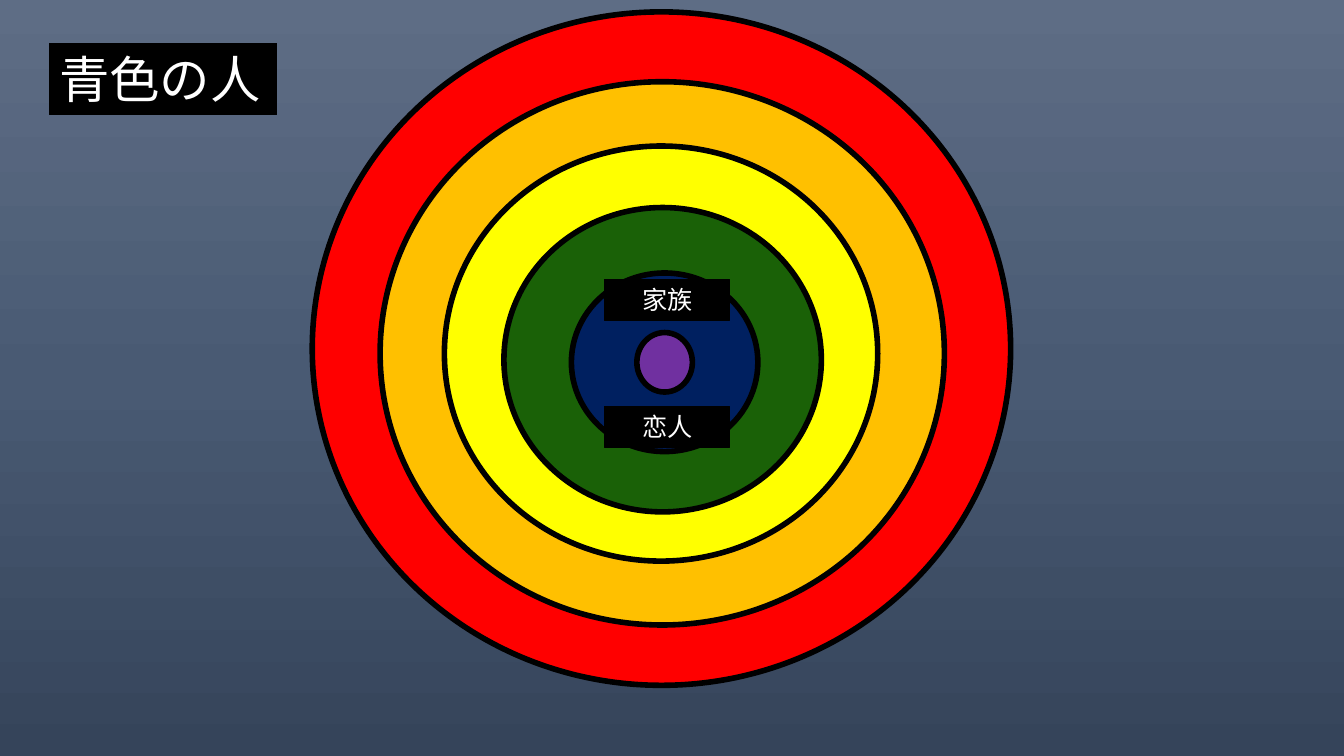
from copy import deepcopy

from lxml.etree import SubElement
from pptx import Presentation
from pptx.dml.color import RGBColor
from pptx.enum.shapes import MSO_SHAPE
from pptx.enum.text import MSO_ANCHOR, MSO_AUTO_SIZE, PP_ALIGN
from pptx.oxml.ns import qn
from pptx.util import Cm, Pt

# Content: lengths in cm, given as left, top, width, height
FONT = "Noto Sans CJK JP"
BLACK, WHITE = "000000", "FFFFFF"
BACKDROP = [(0, "5E6D85"), (0.5, "495A73"), (1, "35445A")]
RINGS = [
    ("FF0000", (7.87, 0.3, 17.6, 16.97)),
    ("FFC000", (9.58, 2.06, 14.22, 13.69)),
    ("FFFF00", (11.2, 3.68, 10.92, 10.46)),
    ("1A6107", (12.7, 5.23, 8.0, 7.67)),
    ("002060", (14.4, 6.88, 4.7, 4.5)),
    ("7030A0", (16.05, 8.38, 1.4, 1.5)),
]
LABELS = [
    ("家族", 18, PP_ALIGN.CENTER, (15.24, 7.04, 3.15, 1.03)),
    ("恋人", 18, PP_ALIGN.CENTER, (15.24, 10.24, 3.15, 1.03)),
    ("青色の人", 36, PP_ALIGN.LEFT, (1.24, 1.09, 5.74, 1.8)),
]


def color(hex_code):
    return RGBColor.from_string(hex_code)


def add_block(slide, kind, box, fill, line_width):
    block = slide.shapes.add_shape(kind, *(Cm(length) for length in box))
    block.shadow.inherit = False
    block.fill.solid()
    block.fill.fore_color.rgb = color(fill)
    block.line.color.rgb = color(BLACK)
    block.line.width = Pt(line_width)
    return block


def add_label(slide, wording, size, align, box):
    label = add_block(slide, MSO_SHAPE.RECTANGLE, box, BLACK, 0.75)
    frame = label.text_frame
    frame.text = wording
    frame.word_wrap = True
    frame.auto_size = MSO_AUTO_SIZE.SHAPE_TO_FIT_TEXT
    frame.vertical_anchor = MSO_ANCHOR.TOP
    paragraph = frame.paragraphs[0]
    paragraph.alignment = align
    paragraph.font.size = Pt(size)
    paragraph.font.color.rgb = color(WHITE)
    paragraph.font.name = FONT
    # Japanese glyphs take the East Asian typeface
    defaults = label.element.find(".//" + qn("a:defRPr"))
    SubElement(defaults, qn("a:ea"), typeface=FONT)


def paint_backdrop(slide):
    fill = slide.background.fill
    fill.gradient()
    fill.gradient_angle = 270
    stops = slide.element.find(".//" + qn("a:gsLst"))
    while len(stops) < len(BACKDROP):
        stops.append(deepcopy(stops[-1]))
    for stop, (position, shade) in zip(fill.gradient_stops, BACKDROP):
        stop.position = position
        stop.color.rgb = color(shade)


def main():
    deck = Presentation()
    deck.slide_width, deck.slide_height = Cm(33.87), Cm(19.05)
    slide = deck.slides.add_slide(deck.slide_layouts[6])
    paint_backdrop(slide)

    # Rings from the outside in, then the labels on top
    for fill, box in RINGS:
        add_block(slide, MSO_SHAPE.OVAL, box, fill, 4)
    for label in LABELS:
        add_label(slide, *label)

    deck.save("out.pptx")


if __name__ == "__main__":
    main()
